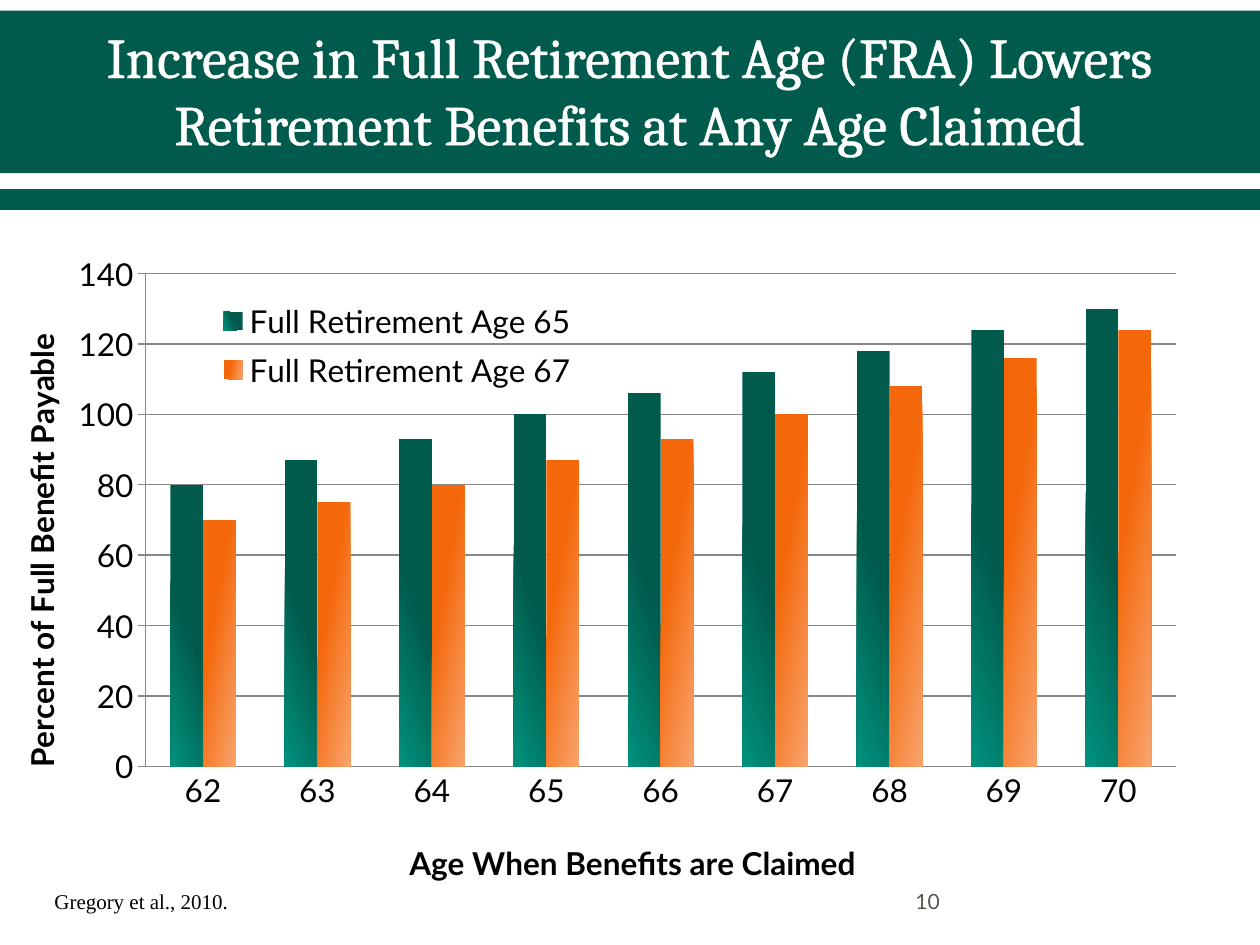
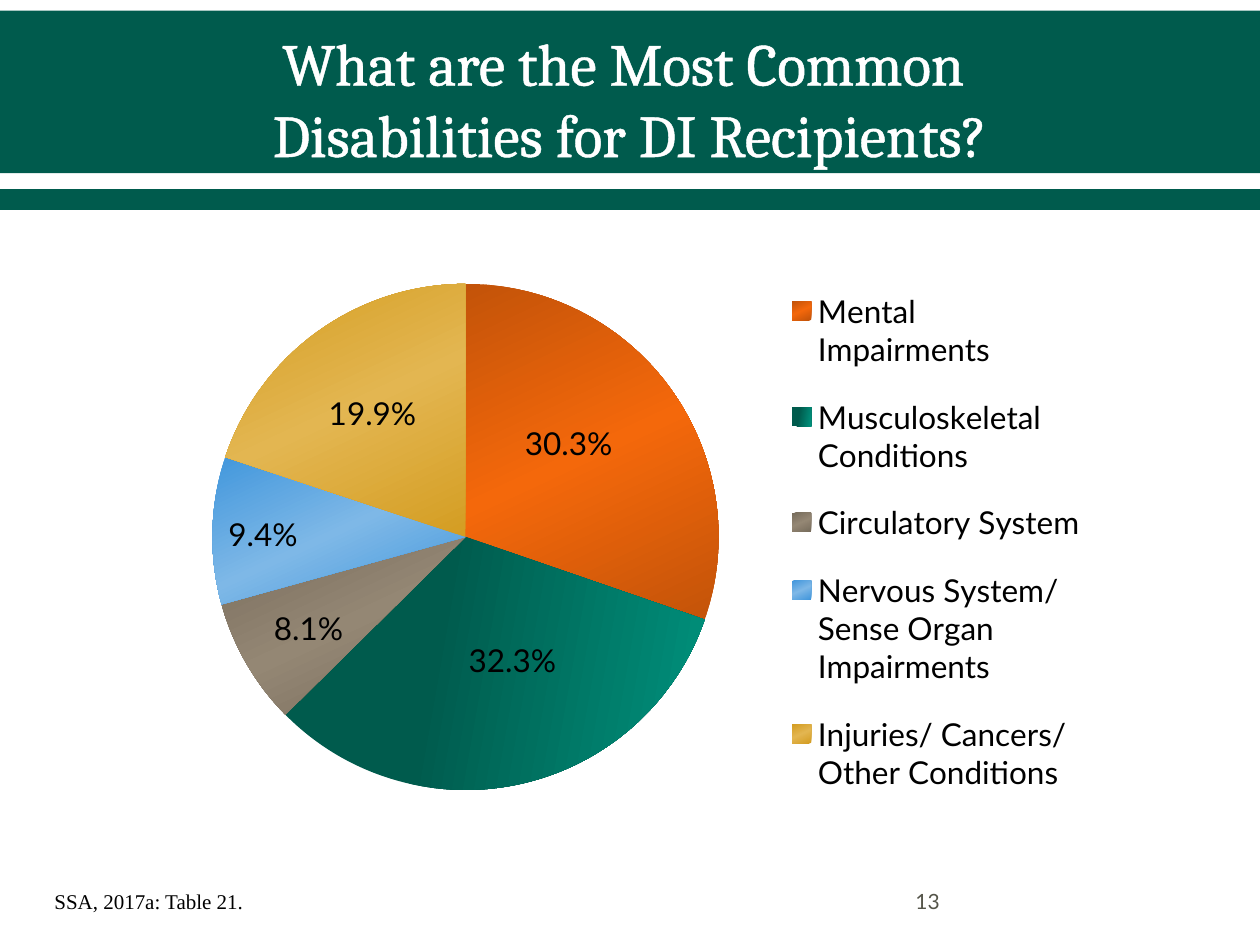
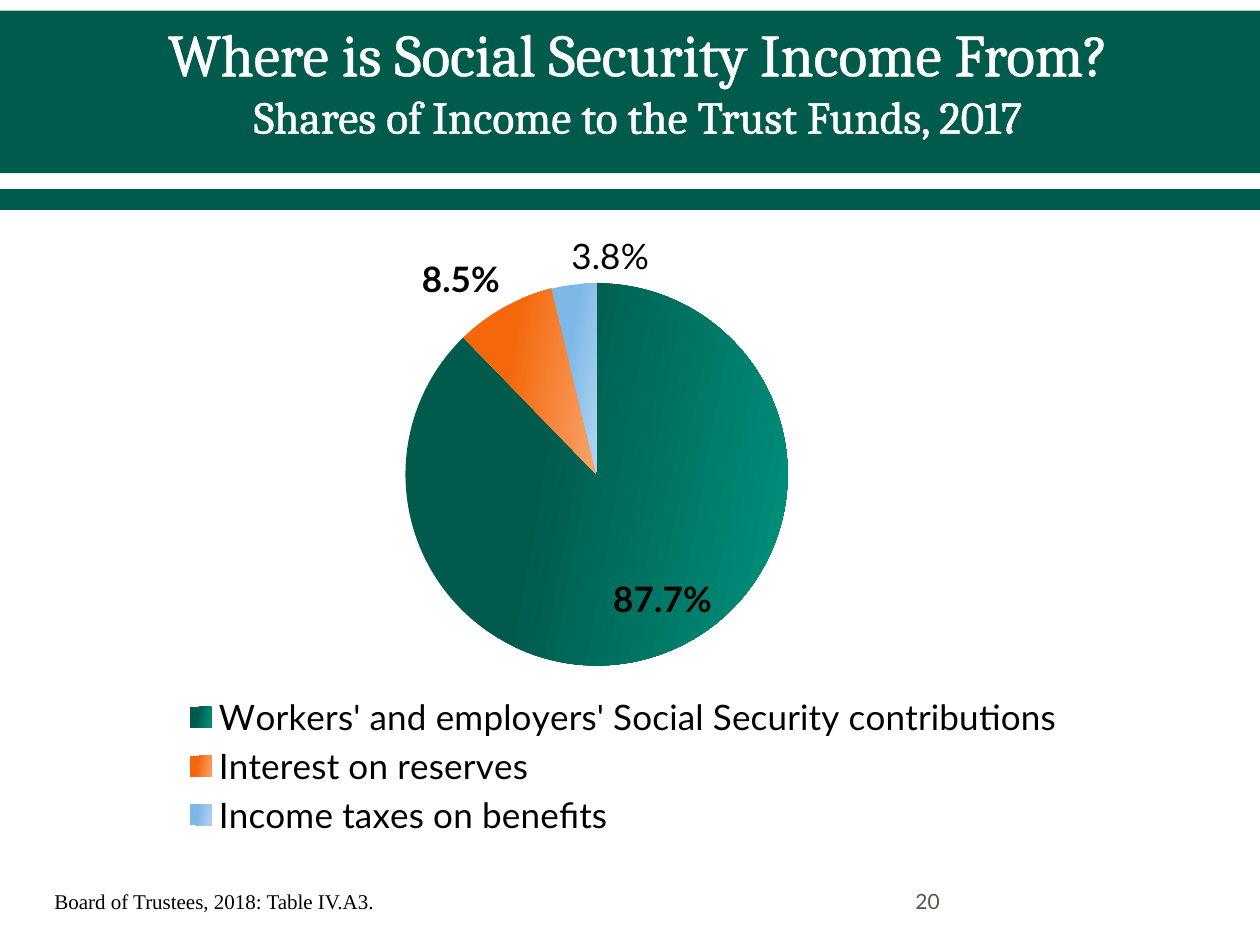
from copy import deepcopy
from dataclasses import dataclass
from typing import NamedTuple

from pptx import Presentation
from pptx.chart.chart import Chart
from pptx.chart.data import CategoryChartData
from pptx.dml.color import RGBColor
from pptx.dml.fill import FillFormat
from pptx.enum.chart import XL_CHART_TYPE, XL_LABEL_POSITION, XL_LEGEND_POSITION, XL_TICK_MARK
from pptx.enum.shapes import MSO_SHAPE
from pptx.enum.text import MSO_ANCHOR, MSO_AUTO_SIZE, PP_ALIGN
from pptx.oxml import parse_xml
from pptx.oxml.ns import nsdecls, qn
from pptx.slide import Slide
from pptx.text.text import Font
from pptx.util import Inches, Pt

WIDE, HIGH = Inches(10), Inches(7.5)
COLS, ROWS = 120, 90
RECT = MSO_SHAPE.RECTANGLE
MIDDLE, CENTER, NOFIT = MSO_ANCHOR.MIDDLE, PP_ALIGN.CENTER, MSO_AUTO_SIZE.NONE
COLUMN, PIE = XL_CHART_TYPE.COLUMN_CLUSTERED, XL_CHART_TYPE.PIE
RIGHT, BOTTOM = XL_LEGEND_POSITION.RIGHT, XL_LEGEND_POSITION.BOTTOM
INSIDE, BEST = XL_LABEL_POSITION.CENTER, XL_LABEL_POSITION.BEST_FIT
NO_TICK, CROSS = XL_TICK_MARK.NONE, XL_TICK_MARK.CROSS

GREEN, TEAL = "005B4D", "00927D"
ORANGE, PEACH = "F4680B", "F8A46D"
BLUE, SKY = "7EB8E7", "B2D4F1"
TAUPE, GOLD = "948774", "E3B651"
WHITE, BLACK, GRAY, RULE = "FFFFFF", "000000", "55554A", "888888"
SERIF, SANS, ROMAN = "Cambria", "Lato", "Times New Roman"


class Box(NamedTuple):
    col: float
    row: float
    cols: float
    rows: float

    def place(self) -> tuple[int, int, int, int]:
        return (int(WIDE * self.col / COLS), int(HIGH * self.row / ROWS),
                int(WIDE * self.cols / COLS), int(HIGH * self.rows / ROWS))


class Stop(NamedTuple):
    at: float
    color: str
    shade: float = 0


class Wash(NamedTuple):
    stops: tuple[Stop, Stop, Stop]
    angle: float


class Share(NamedTuple):
    x: float
    y: float
    w: float = 0
    h: float = 0


class Line(NamedTuple):
    text: str
    size: float


@dataclass
class Graph:
    kind: int
    box: Box
    cats: list[str]
    data: dict[str, list[float]]
    fills: list[Wash]
    plot: Share
    legend: Share
    side: int
    size: float


@dataclass
class Labels:
    format: str
    spot: int
    color: str
    shifts: dict[int, Share]


@dataclass
class Page:
    title: list[Line]
    head: Box
    source: str
    number: str
    graph: Graph
    labels: Labels | None = None


def fade(dark: str, light: str, hold: float = 0.36, angle: float = 10) -> Wash:
    return Wash((Stop(0, dark), Stop(hold, dark), Stop(1, light)), angle)


def sheen(color: str) -> Wash:
    return Wash((Stop(0, color, -0.2), Stop(0.5, color), Stop(1, color, -0.2)), 65)


BANDS = [Box(0, 1, COLS, 15.5), Box(0, 18, COLS, 2)]
SOURCE, NUMBER = Box(4, 84, 33, 3.6), Box(86, 83.4, 28, 4.8)

PAGES = [
    Page(
        [Line("Increase in Full Retirement Age (FRA) Lowers "
              "Retirement Benefits at Any Age Claimed", 32)],
        Box(0, 1, COLS, 15), "Gregory et al., 2010.", "10",
        Graph(COLUMN, Box(0, 16, 124, 69), [str(age) for age in range(62, 71)],
              {"Full Retirement Age 65": [80, 87, 93, 100, 106, 112, 118, 124, 130],
               "Full Retirement Age 67": [70, 75, 80, 87, 93, 100, 108, 116, 124]},
              [fade(GREEN, TEAL, 0.5, 160), fade(ORANGE, PEACH)],
              Share(0.112, 0.146, 0.791, 0.68), Share(0.16, 0.17, 0.29, 0.15),
              RIGHT, 18)),
    Page(
        [Line("What are the Most Common ", 34), Line("Disabilities for DI Recipients?", 34)],
        Box(6, 2, 108, 14.6), "SSA, 2017a: Table 21.", "13",
        Graph(PIE, Box(15, 17, 90.4, 66.5),
              ["Mental Impairments", "Musculoskeletal Conditions", "Circulatory System",
               "Nervous System/ Sense Organ Impairments",
               "Injuries/ Cancers/ Other Conditions"],
              {"Series 1": [30.3, 32.3, 8.1, 9.4, 19.9]},
              [sheen(ORANGE), fade(GREEN, TEAL), sheen(TAUPE), sheen(BLUE), sheen(GOLD)],
              Share(0.057, 0.151, 0.535, 0.725), Share(0.66, 0.12, 0.32, 0.8),
              RIGHT, 18),
        Labels(r"General\%", INSIDE, WHITE,
               {0: Share(0, -0.03), 1: Share(0.02, 0), 2: Share(-0.05, 0.04),
                3: Share(-0.08, 0), 4: Share(-0.02, -0.03)})),
    Page(
        [Line("Where is Social Security Income From?", 34),
         Line("Shares of Income to the Trust Funds, 2017", 26)],
        Box(4.8, 0.1, 112, 15), "Board of Trustees, 2018: Table IV.A3.", "20",
        Graph(PIE, Box(13, 21, 91, 63),
              ["Workers' and employers' Social Security contributions",
               "Interest on reserves", "Income taxes on benefits"],
              {"Series 1": [0.877, 0.085, 0.038]},
              [fade(GREEN, TEAL), fade(ORANGE, PEACH), fade(BLUE, SKY)],
              Share(0.275, 0.095, 0.413, 0.578), Share(0.04, 0.71, 0.94, 0.23),
              BOTTOM, 20),
        Labels("0.0%", BEST, BLACK, {2: Share(0.08, 0)})),
]


def tint(code: str) -> RGBColor:
    return RGBColor.from_string(code)


def style(font: Font, size: float, color: str, name: str = SANS, bold: bool = False) -> None:
    font.size, font.name, font.bold = Pt(size), name, bold
    font.color.rgb = tint(color)


def wash(fill: FillFormat, look: Wash) -> None:
    fill.gradient()
    fill.gradient_angle = 360 - look.angle
    first = fill.gradient_stops[0]._gs
    first.addnext(deepcopy(first))
    for stop, want in zip(fill.gradient_stops, look.stops):
        stop.position = want.at
        stop.color.rgb = tint(want.color)
        if want.shade:
            stop.color.brightness = want.shade


def lay(node, index: int, share: Share, inner: bool = False, edge: bool = True) -> None:
    for old in node.findall(qn("c:layout")):
        node.remove(old)
    parts = [("layoutTarget", "inner")] if inner else []
    if edge:
        parts += [("xMode", "edge"), ("yMode", "edge")]
    parts += [("x", share.x), ("y", share.y)]
    if share.w:
        parts += [("w", share.w), ("h", share.h)]
    body = "".join(f'<c:{tag} val="{val}"/>' for tag, val in parts)
    node.insert(index, parse_xml(
        f'<c:layout {nsdecls("c")}><c:manualLayout>{body}</c:manualLayout></c:layout>'))


def add_bands(slide: Slide) -> None:
    for box in BANDS:
        band = slide.shapes.add_shape(RECT, *box.place())
        band.shadow.inherit = False
        band.fill.solid()
        band.fill.fore_color.rgb = tint(GREEN)
        band.line.fill.background()
        slide.shapes.title.element.addprevious(band.element)


def set_title(slide: Slide, page: Page) -> None:
    title = slide.shapes.title
    title.left, title.top, title.width, title.height = page.head.place()
    frame = title.text_frame
    frame.text = "\v".join(line.text for line in page.title)
    frame.word_wrap, frame.auto_size = True, NOFIT
    frame.vertical_anchor = MIDDLE
    text = frame.paragraphs[0]
    text.alignment = CENTER
    for run, line in zip(text.runs, page.title):
        style(run.font, line.size, WHITE, SERIF)
    for props in title.element.iter(qn("a:rPr")):
        props.insert(0, parse_xml(
            f'<a:ln {nsdecls("a")} w="13970"><a:solidFill><a:srgbClr val="{WHITE}"/>'
            '</a:solidFill></a:ln>'))
    for gap in title.element.iter(qn("a:br")):
        gap.append(deepcopy(gap.getprevious().find(qn("a:rPr"))))


def add_note(slide: Slide, box: Box, text: str, color: str, name: str) -> None:
    frame = slide.shapes.add_textbox(*box.place()).text_frame
    frame.text = text
    frame.word_wrap = False
    frame.vertical_anchor = MIDDLE
    style(frame.paragraphs[0].runs[0].font, 12, color, name)


def add_graph(slide: Slide, graph: Graph) -> Chart:
    data = CategoryChartData()
    data.categories = graph.cats
    for name, vals in graph.data.items():
        data.add_series(name, vals)
    chart = slide.shapes.add_chart(graph.kind, *graph.box.place(), data).chart
    chart.has_title = False
    style(chart.font, graph.size, BLACK)
    chart.has_legend = True
    chart.legend.position = graph.side
    chart.legend.include_in_layout = False
    style(chart.legend.font, graph.size, BLACK)
    lay(chart.element.find(".//" + qn("c:plotArea")), 0, graph.plot, inner=True)
    lay(chart.element.find(".//" + qn("c:legend")), 1, graph.legend)
    return chart


def dress_bars(chart: Chart, graph: Graph) -> None:
    plot = chart.plots[0]
    plot.vary_by_categories = False
    plot.gap_width, plot.overlap = 150, 0
    for series, look in zip(plot.series, graph.fills):
        wash(series.format.fill, look)
    base, scale = chart.category_axis, chart.value_axis
    scale.minimum_scale, scale.maximum_scale, scale.major_unit = 0, 140, 20
    scale.has_major_gridlines = True
    scale.major_gridlines.format.line.color.rgb = tint(RULE)
    scale.tick_labels.number_format = "#,##0"
    scale.tick_labels.number_format_is_linked = False
    for axis, name, tick in ((base, "Age When Benefits are Claimed", NO_TICK),
                             (scale, "Percent of Full Benefit Payable ", CROSS)):
        axis.major_tick_mark, axis.minor_tick_mark = tick, NO_TICK
        axis.format.line.color.rgb = tint(RULE)
        style(axis.tick_labels.font, graph.size, BLACK)
        frame = axis.axis_title.text_frame
        frame.text = name
        style(frame.paragraphs[0].runs[0].font, graph.size, BLACK, bold=True)
    low, side = chart.element.iter(qn("c:title"))
    lay(low, 1, Share(0.31, 0.92))
    lay(side, 1, Share(0.01, 0.21))
    turn = side.find(".//" + qn("a:bodyPr"))
    turn.set("rot", "-5400000")
    turn.set("vert", "horz")


def dress_pie(chart: Chart, graph: Graph, labels: Labels) -> None:
    plot = chart.plots[0]
    plot.vary_by_categories = True
    series = plot.series[0]
    for index, look in enumerate(graph.fills):
        wash(series.points[index].format.fill, look)
    tags = series.data_labels
    tags.show_value = True
    tags.number_format, tags.number_format_is_linked = labels.format, False
    tags.position = labels.spot
    style(tags.font, graph.size, labels.color, bold=True)
    for index in labels.shifts:
        series.points[index].data_label.position = labels.spot
    for node, shift in zip(chart.element.iter(qn("c:dLbl")), labels.shifts.values()):
        lay(node, 1, shift, edge=False)


def main() -> None:
    deck = Presentation()
    deck.slide_width, deck.slide_height = WIDE, HIGH
    for page in PAGES:
        slide = deck.slides.add_slide(deck.slide_layouts[5])
        add_bands(slide)
        set_title(slide, page)
        add_note(slide, NUMBER, page.number, GRAY, SANS)
        add_note(slide, SOURCE, page.source, BLACK, ROMAN)
        chart = add_graph(slide, page.graph)
        if page.labels:
            dress_pie(chart, page.graph, page.labels)
        else:
            dress_bars(chart, page.graph)
    deck.save("out.pptx")


if __name__ == "__main__":
    main()
